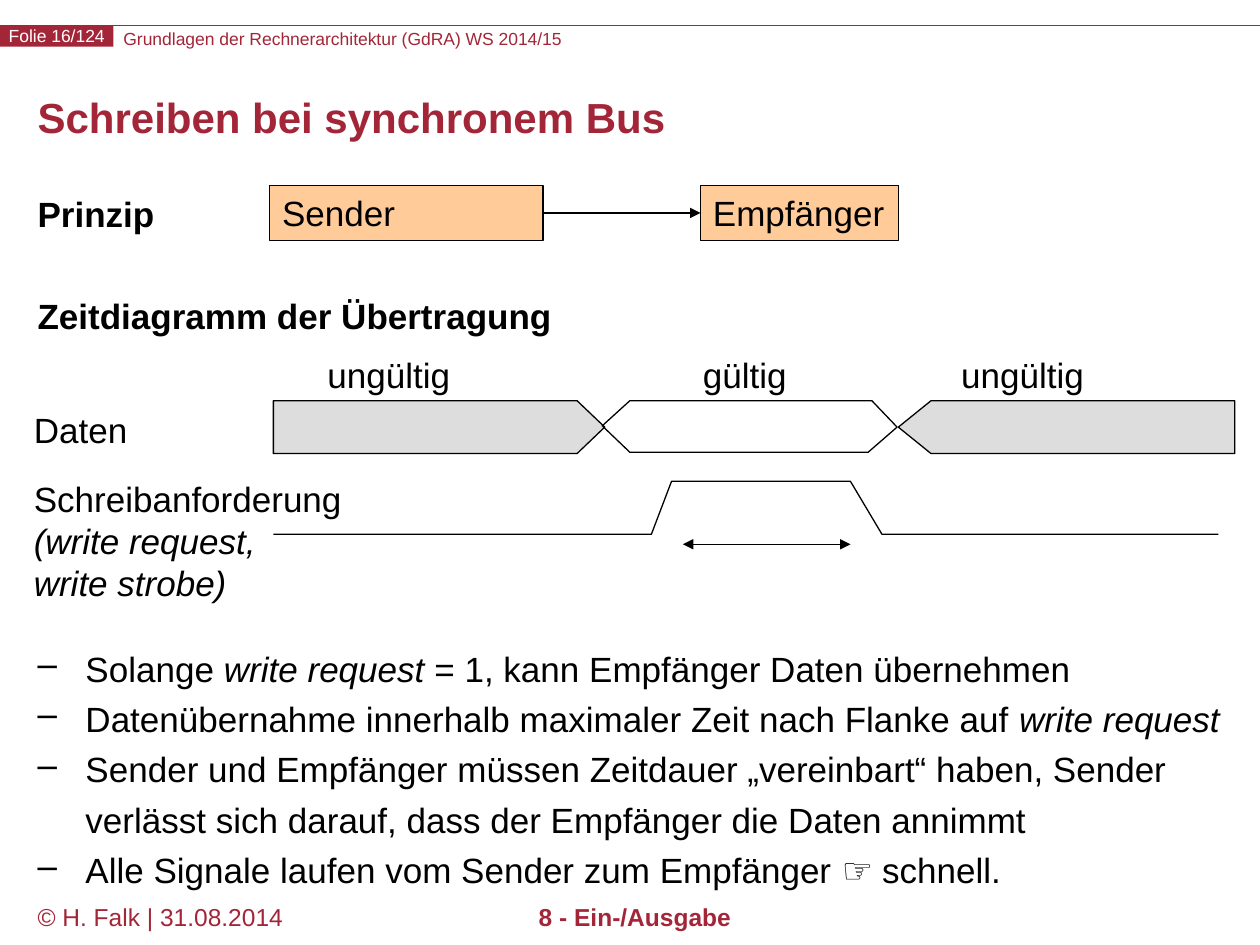
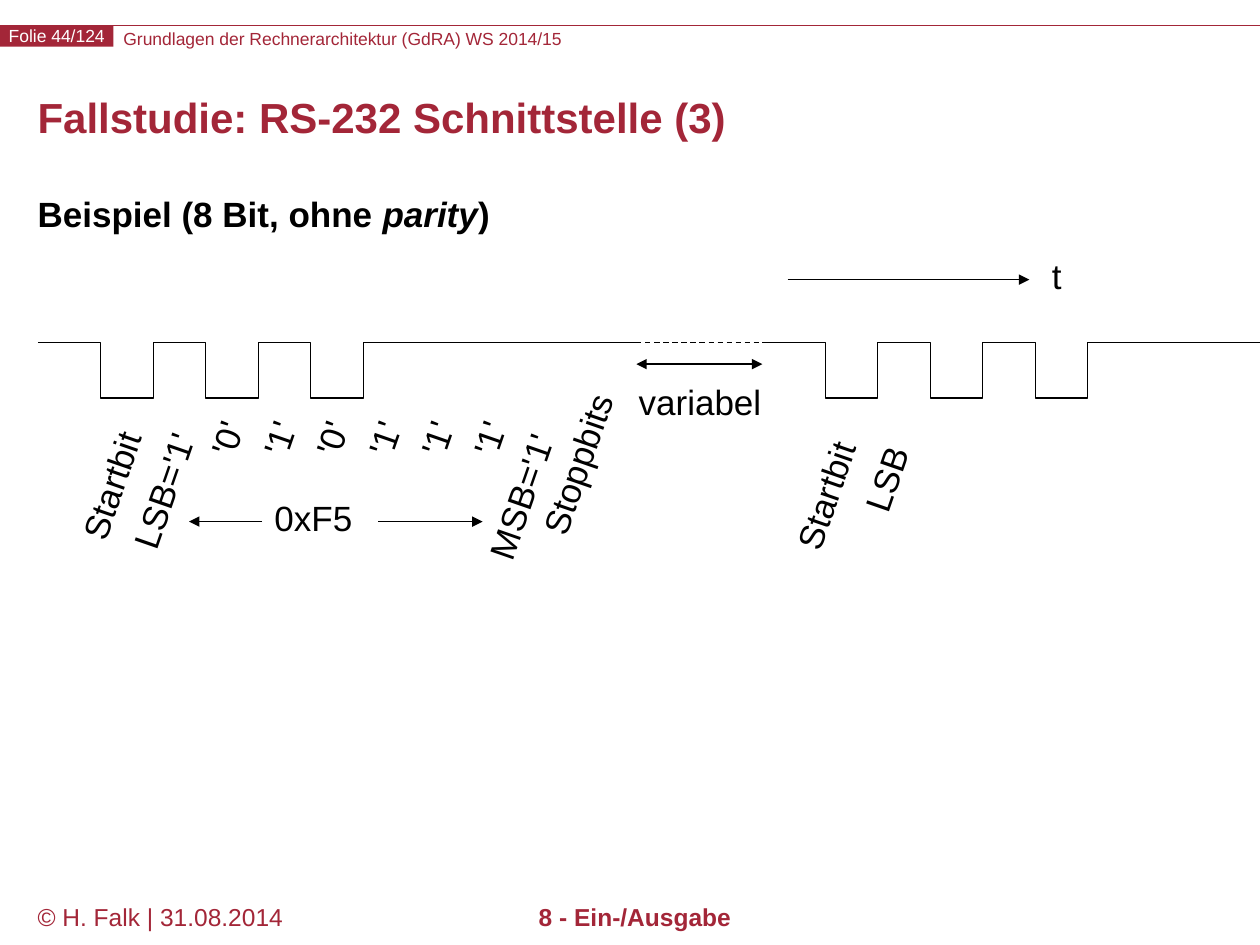
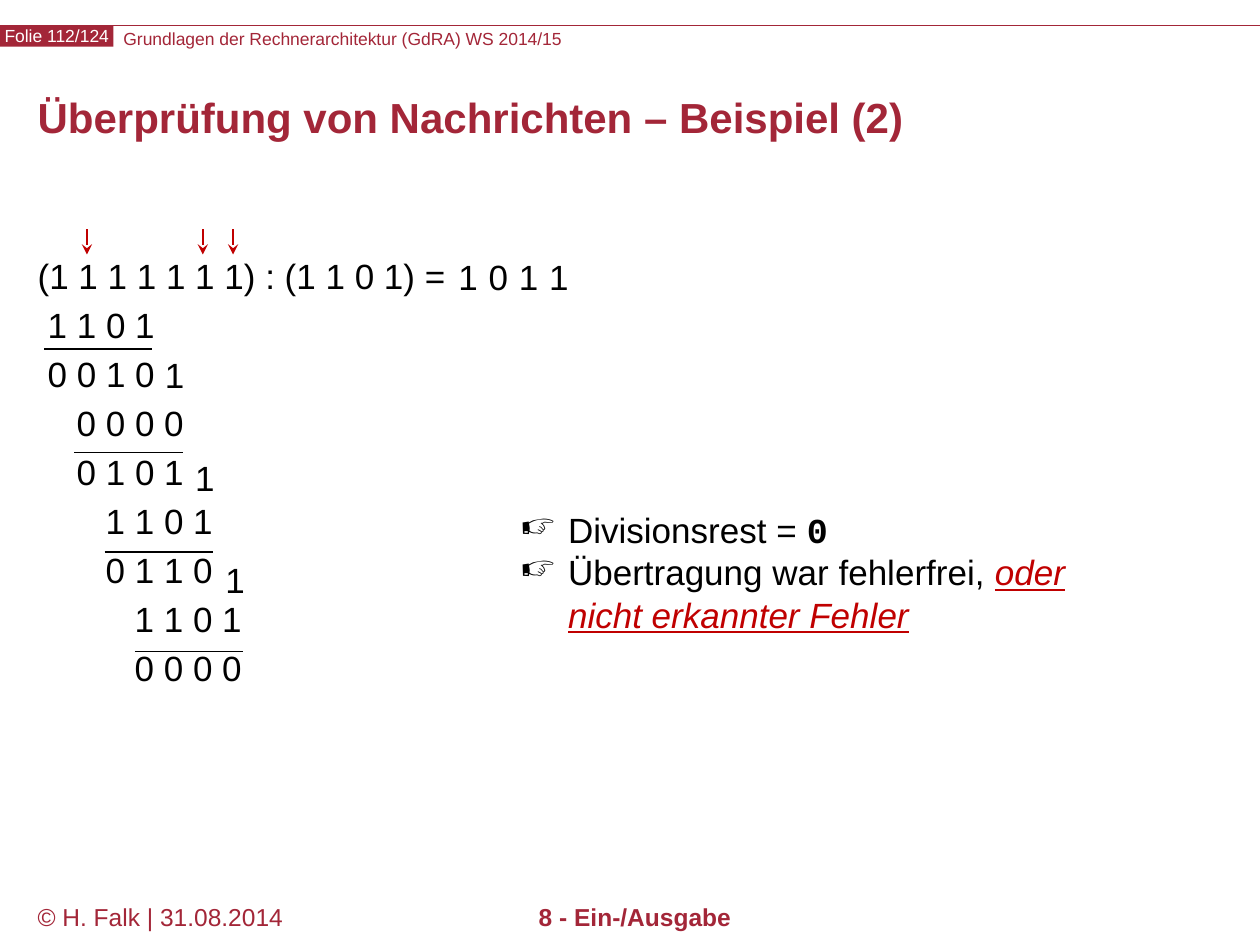
from dataclasses import dataclass
from typing import NamedTuple, Optional

from lxml.etree import SubElement
from pptx import Presentation
from pptx.dml.color import RGBColor
from pptx.enum.dml import MSO_LINE
from pptx.enum.shapes import MSO_CONNECTOR, MSO_SHAPE
from pptx.enum.text import MSO_ANCHOR, PP_ALIGN
from pptx.oxml.ns import qn
from pptx.util import Inches, Pt

# Shared style
CRIMSON = RGBColor(0xA3, 0x26, 0x38)
RED = RGBColor(0xC0, 0x00, 0x00)
ORANGE = RGBColor(0xFF, 0xCC, 0x99)
GREY = RGBColor(0xDD, 0xDD, 0xDD)
BLACK = RGBColor(0x00, 0x00, 0x00)
WHITE = RGBColor(0xFF, 0xFF, 0xFF)
FONT = "Arial"
MONO = "Courier New"
HANG = 0.38
LABEL_H = 0.44
TILT = 289.1
PAGE_COUNT = 124


class Box(NamedTuple):
    left: float
    top: float
    width: float
    height: float = LABEL_H


class Label(NamedTuple):
    text: str
    box: Box


class Point(NamedTuple):
    x: float
    y: float


@dataclass
class Run:
    text: str
    bold: bool = False
    italic: bool = False
    underline: bool = False
    size: float = 20
    color: RGBColor = BLACK
    font: str = FONT


@dataclass
class Para:
    runs: list[Run]
    align: PP_ALIGN = PP_ALIGN.LEFT
    spacing: Optional[float] = None
    before: float = 0
    indent: float = 0
    hanging: float = 0
    bullet: str = ""


# Text
def add_run(p, run: Run) -> None:
    for i, line in enumerate(run.text.split("\n")):
        if i:
            p.add_line_break()
        r = p.add_run()
        r.text = line
        font = r.font
        font.name, font.size = run.font, Pt(run.size)
        font.bold, font.italic, font.underline = run.bold, run.italic, run.underline
        font.color.rgb = run.color


def fill_text(tf, paras: list[Para], inset: bool = True, wrap: bool = True,
              anchor: MSO_ANCHOR = MSO_ANCHOR.TOP) -> None:
    tf.word_wrap = wrap
    tf.vertical_anchor = anchor
    tf.margin_left = tf.margin_right = Inches(0.1 if inset else 0)
    tf.margin_top = tf.margin_bottom = Inches(0.05 if inset else 0)
    for i, para in enumerate(paras):
        p = tf.add_paragraph() if i else tf.paragraphs[0]
        p.alignment = para.align
        if para.spacing:
            p.line_spacing = para.spacing
        if para.before:
            p.space_before = Pt(para.before)
        pPr = p._p.get_or_add_pPr()
        pPr.set("marL", str(Inches(para.indent + para.hanging)))
        pPr.set("indent", str(-Inches(para.hanging)))
        if para.bullet:
            SubElement(pPr, qn("a:buChar")).set("char", para.bullet)
        for run in para.runs:
            add_run(p, run)


def add_text(slide, box: Box, paras: list[Para], inset: bool = True, wrap: bool = True,
             anchor: MSO_ANCHOR = MSO_ANCHOR.TOP):
    sp = slide.shapes.add_textbox(*map(Inches, box))
    fill_text(sp.text_frame, paras, inset, wrap, anchor)
    return sp


def add_label(slide, label: Label, rotation: float = 0) -> None:
    sp = add_text(slide, label.box, [Para([Run(label.text)])], wrap=False)
    sp.rotation = rotation


# Shapes and lines
def add_rect(slide, box: Box, fill: RGBColor, para: Para, line: Optional[RGBColor] = None,
             inset: bool = True):
    sp = slide.shapes.add_shape(MSO_SHAPE.RECTANGLE, *map(Inches, box))
    sp.shadow.inherit = False
    sp.fill.solid()
    sp.fill.fore_color.rgb = fill
    if line is None:
        sp.line.fill.background()
    else:
        sp.line.color.rgb = line
        sp.line.width = Pt(0.75)
    fill_text(sp.text_frame, [para], inset, wrap=False, anchor=MSO_ANCHOR.MIDDLE)
    return sp


def add_line(slide, start: Point, end: Point, color: RGBColor = BLACK, width: float = 0.75,
             head: str = "", tail: str = "", dashed: bool = False):
    cxn = slide.shapes.add_connector(MSO_CONNECTOR.STRAIGHT, *map(Inches, (*start, *end)))
    cxn.line.color.rgb = color
    cxn.line.width = Pt(width)
    if dashed:
        cxn.line.dash_style = MSO_LINE.DASH
    ln = cxn.line._get_or_add_ln()
    for tag, kind in (("a:headEnd", head), ("a:tailEnd", tail)):
        if kind:
            SubElement(ln, qn(tag)).set("type", kind)
    SubElement(cxn._element.spPr, qn("a:effectLst"))
    return cxn


def add_outline(slide, points: list[Point], fill: Optional[RGBColor] = None,
                close: bool = False) -> None:
    start, *rest = [(Inches(pt.x), Inches(pt.y)) for pt in points]
    builder = slide.shapes.build_freeform(*start)
    builder.add_line_segments(rest, close=close)
    sp = builder.convert_to_shape()
    sp.shadow.inherit = False
    if fill is None:
        sp.fill.background()
    else:
        sp.fill.solid()
        sp.fill.fore_color.rgb = fill
    sp.line.color.rgb = BLACK
    sp.line.width = Pt(0.75)


# Header, title and footer of every slide
def new_slide(prs, page: int, title: str):
    slide = prs.slides.add_slide(prs.slide_layouts[6])
    add_line(slide, Point(0, 0.2), Point(10, 0.2), CRIMSON)
    course = Run("Grundlagen der Rechnerarchitektur (GdRA) WS 2014/15", size=10, color=CRIMSON)
    add_text(slide, Box(0.98, 0.22, 6.6, 0.17), [Para([course])], inset=False)
    number = Run(f"Folie {page}/{PAGE_COUNT}", size=10, color=WHITE)
    add_rect(slide, Box(0, 0.2, 0.9, 0.17), CRIMSON, Para([number], PP_ALIGN.CENTER), inset=False)
    add_text(slide, Box(0.2, 7.11, 2.2, 0.39),
             [Para([Run("© H. Falk | 31.08.2014", size=14, color=CRIMSON)])])
    chapter = Run("8 - Ein-/Ausgabe", bold=True, size=14, color=CRIMSON)
    add_text(slide, Box(2.01, 7.11, 6.06, 0.39), [Para([chapter], PP_ALIGN.CENTER)])
    heading = Run(title, bold=True, size=24, color=CRIMSON)
    add_text(slide, Box(0.2, 0.6, 9.61, 0.72), [Para([heading], spacing=Pt(24))],
             anchor=MSO_ANCHOR.MIDDLE)
    return slide


def add_body(slide, paras: list[Para]) -> None:
    add_text(slide, Box(0.2, 1.52, 9.61, 5.46), paras)


# Slide 1: synchronous bus write
def build_bus_write(prs) -> None:
    slide = new_slide(prs, 16, "Schreiben bei synchronem Bus")
    request = Run("write request", italic=True)
    bullets = [
        [Run("Solange "), request, Run(" = 1, kann Empfänger Daten übernehmen")],
        [Run("Datenübernahme innerhalb maximaler Zeit nach Flanke auf "), request],
        [Run("Sender und Empfänger müssen Zeitdauer „vereinbart“ haben, Sender "
             "verlässt sich darauf, dass der Empfänger die Daten annimmt")],
        [Run("Alle Signale laufen vom Sender zum Empfänger ☞ schnell.")],
    ]
    line = 28.8  # points per body line
    body = [Para([Run("Prinzip", bold=True)], spacing=0.9),
            Para([Run("Zeitdiagramm der Übertragung", bold=True)], spacing=1.2, before=line)]
    body += [Para(runs, spacing=1.2, before=0 if i else 6 * line, hanging=HANG, bullet="–")
             for i, runs in enumerate(bullets)]
    add_body(slide, body)

    # Principle
    sender, receiver = [
        add_rect(slide, label.box, ORANGE, Para([Run(label.text)]), BLACK)
        for label in (Label("Sender", Box(2.14, 1.47, 2.17)),
                      Label("Empfänger", Box(5.56, 1.47, 1.57)))
    ]
    cxn = add_line(slide, Point(4.31, 1.69), Point(5.56, 1.69), tail="triangle")
    cxn.begin_connect(sender, 3)
    cxn.end_connect(receiver, 1)

    # Signal names
    add_label(slide, Label("Daten", Box(0.17, 3.19, 2)))
    add_text(slide, Box(0.17, 3.74, 3.33, 1.11),
             [Para([Run("Schreibanforderung\n"),
                    Run("(write request,\nwrite strobe)", italic=True)])])

    # Data line: invalid, invalid, valid
    top, mid, bottom = 3.18, 3.39, 3.6
    for edge, bend, tip in ((2.17, 4.58, 4.8), (9.8, 7.39, 7.13)):
        add_outline(slide, [Point(edge, top), Point(edge, bottom), Point(bend, bottom),
                            Point(tip, mid), Point(bend, top)], GREY, close=True)
    add_outline(slide, [Point(4.78, 3.38), Point(5, top), Point(6.92, top), Point(7.12, mid),
                        Point(6.89, 3.59), Point(5, 3.59)], close=True)
    for text, left in (("ungültig", 2.5), ("gültig", 5.48), ("ungültig", 7.53)):
        add_label(slide, Label(text, Box(left, 2.76, 1.18)))

    # Write request line
    low, high = 4.24, 3.82
    add_outline(slide, [Point(2.17, low), Point(5.17, low), Point(5.33, high),
                        Point(6.75, high), Point(7, low), Point(9.67, low)])
    add_line(slide, Point(5.42, 4.32), Point(6.75, 4.32), head="triangle", tail="triangle")


# Slide 2: serial frame
def pulse_train(start: float, end: float, bit: float) -> list[Point]:
    high, low = 2.72, 3.16
    points = [Point(start, high)]
    for i in range(3):
        fall = start + 0.5 + 2 * i * bit
        rise = fall + bit
        points += [Point(fall, high), Point(fall, low), Point(rise, low), Point(rise, high)]
    return points + [Point(end, high)]


def build_serial_frame(prs) -> None:
    slide = new_slide(prs, 44, "Fallstudie: RS-232 Schnittstelle (3)")
    add_body(slide, [Para([Run("Beispiel (8 Bit, ohne ", bold=True),
                           Run("parity", bold=True, italic=True),
                           Run(")", bold=True)], spacing=0.9)])

    # Signal with idle gap
    bit = 5 / 12
    for start, end in ((0.3, 5.05), (6.05, 10)):
        add_outline(slide, pulse_train(start, end, bit))
    add_line(slide, Point(5.05, 2.72), Point(6.05, 2.72), dashed=True)
    add_line(slide, Point(5.05, 2.89), Point(6.05, 2.89), head="triangle", tail="triangle")

    # Tilted bit names
    tilted = [
        Label("Startbit", Box(0.34, 3.63, 1.09)),
        Label("Startbit", Box(6.01, 3.71, 1.09)),
        Label("LSB='1'", Box(0.72, 3.67, 1.16)),
        Label("LSB", Box(6.67, 3.58, 0.73)),
        Label("MSB='1'", Box(3.52, 3.72, 1.23)),
        Label("Stoppbits", Box(3.9, 3.46, 1.37)),
    ]
    tilted += [Label(f"'{value}'", Box(1.57 + i * bit, 3.26, 0.46))
               for i, value in enumerate("010111")]
    for label in tilted:
        add_label(slide, label, TILT)

    # Time axis, gap and byte value
    for label in (Label("variabel", Box(4.97, 2.97, 1.42)),
                  Label("t", Box(8.25, 1.97, 0.83)),
                  Label("0xF5", Box(2.08, 3.89, 1.92))):
        add_label(slide, label)
    for start, end in ((Point(6.25, 2.22), Point(8.17, 2.22)),
                       (Point(2.08, 4.14), Point(1.5, 4.14)),
                       (Point(3, 4.14), Point(3.83, 4.14))):
        add_line(slide, start, end, tail="triangle")


# Slide 3: polynomial division
def build_division(prs) -> None:
    slide = new_slide(prs, 112, "Überprüfung von Nachrichten – Beispiel (2)")
    steps = [("1 1 0 1", "0 0 1 0"), ("0 0 0 0", "0 1 0 1"),
             ("1 1 0 1", "0 1 1 0"), ("1 1 0 1", "0 0 0 0")]
    rows = [Para([Run("(1 1 1 1 1 1 1) : (1 1 0 1) =")])]
    rows += [Para([Run(digits)], before=4, indent=0.08 + 0.23 * i)
             for i, step in enumerate(steps) for digits in step]
    add_text(slide, Box(0.2, 1.97, 9.61, 4.46), rows)

    # Quotient, digits brought down and subtraction lines
    column = 0.24
    for i, digit in enumerate("1011"):
        add_label(slide, Label(digit, Box(3.54 + i * column, 1.98, 0.36)))
    for i in range(3):
        add_label(slide, Label("1", Box(1.21 + i * column, 2.76 + 0.81 * i, 0.36)))
    for i, y in enumerate((2.77, 3.59, 4.38, 5.17)):
        left = 0.35 + i * column
        add_line(slide, Point(left, y), Point(left + 0.86, y))
    for x in (0.69, 1.61, 1.85):
        add_line(slide, Point(x, 1.82), Point(x, 2.02), RED, 1.5, tail="stealth")

    # Conclusion
    results = [
        [Run("Divisionsrest = "), Run("0", bold=True, font=MONO)],
        [Run("Übertragung war fehlerfrei, "),
         Run("oder\nnicht erkannter Fehler", italic=True, underline=True, color=RED)],
    ]
    add_text(slide, Box(4.03, 3.99, 4.55, 1.11),
             [Para(runs, hanging=HANG, bullet="☞") for runs in results], wrap=False)


def main() -> None:
    prs = Presentation()
    prs.slide_width, prs.slide_height = Inches(10), Inches(7.5)
    build_bus_write(prs)
    build_serial_frame(prs)
    build_division(prs)
    prs.save("out.pptx")


if __name__ == "__main__":
    main()
